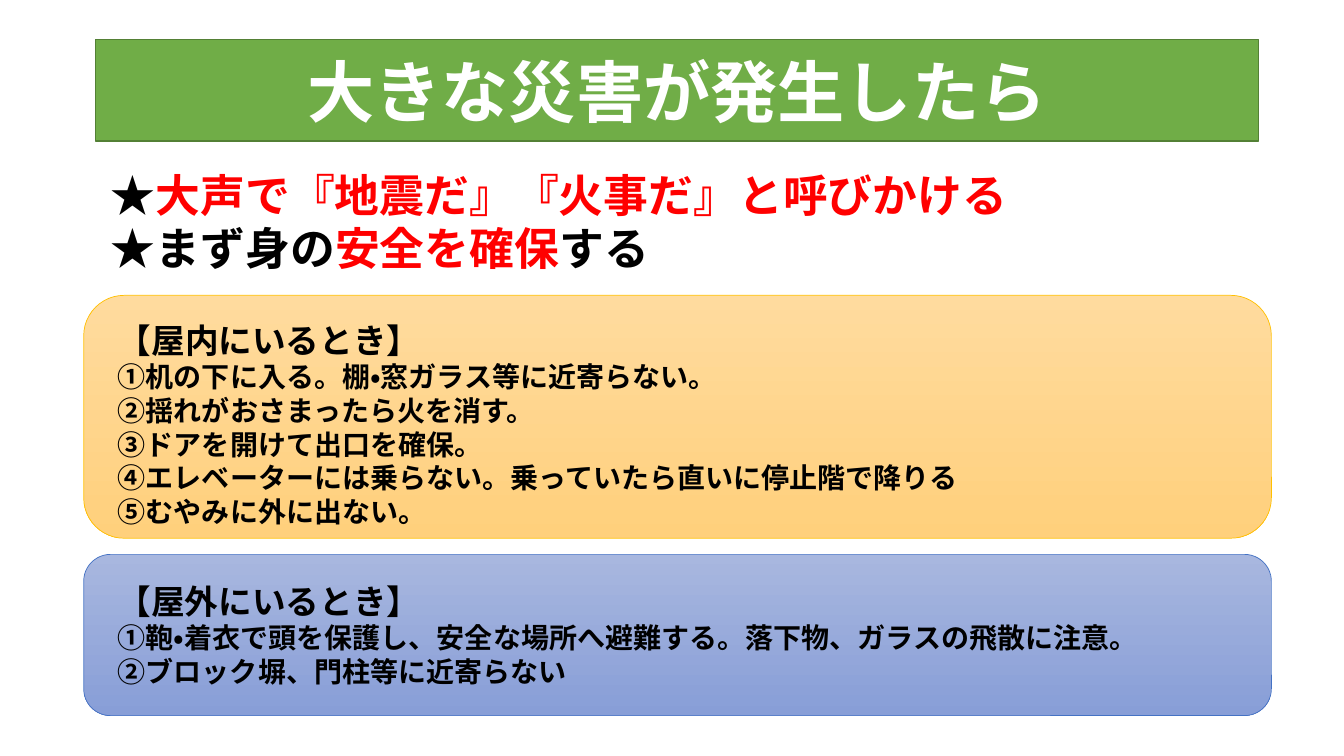
import pptx
import pptx.dml.color
import pptx.enum.lang
import pptx.enum.shapes
import pptx.enum.text
import pptx.util

Inches = pptx.util.Inches
RGBColor = pptx.dml.color.RGBColor

FONT = "Calibri"
WHITE = RGBColor(0xFF, 0xFF, 0xFF)
BLACK = RGBColor(0x00, 0x00, 0x00)
RED = RGBColor(0xFF, 0x00, 0x00)
GREEN = RGBColor(0x70, 0xAD, 0x47)
DARK_GREEN = RGBColor(0x53, 0x80, 0x35)
INDOOR_TOP = RGBColor(0xFF, 0xDB, 0x9E)
INDOOR_BOTTOM = RGBColor(0xFF, 0xD0, 0x7C)
INDOOR_EDGE = RGBColor(0xFF, 0xC0, 0x00)
OUTDOOR_TOP = RGBColor(0xA8, 0xB7, 0xDF)
OUTDOOR_BOTTOM = RGBColor(0x88, 0x9E, 0xD7)
OUTDOOR_EDGE = RGBColor(0x44, 0x72, 0xC4)

CALLS = [
    [("★", BLACK), ("大声で『地震だ』『火事だ』と呼びかける", RED)],
    [("★まず身の", BLACK), ("安全を確保", RED), ("する", BLACK)],
]
INDOOR_RULES = [
    "①机の下に入る。棚・窓ガラス等に近寄らない。",
    "②揺れがおさまったら火を消す。",
    "③ドアを開けて出口を確保。",
    "④エレベーターには乗らない。乗っていたら直いに停止階で降りる",
    "⑤むやみに外に出ない。",
]
OUTDOOR_RULES = [
    "①鞄・着衣で頭を保護し、安全な場所へ避難する。落下物、ガラスの飛散に注意。",
    "②ブロック塀、門柱等に近寄らない",
]


def add_run(paragraph, text, size, color=BLACK):
    run = paragraph.add_run()
    run.text = text
    font = run.font
    font.name = FONT
    font.size = pptx.util.Pt(size)
    font.bold = True
    font.color.rgb = color
    font.language_id = pptx.enum.lang.MSO_LANGUAGE_ID.JAPANESE


def format_title(title, text):
    title.left, title.top = Inches(0.95), Inches(0.39)
    title.width, title.height = Inches(11.53), Inches(1.01)
    title.fill.solid()
    title.fill.fore_color.rgb = GREEN
    title.line.color.rgb = DARK_GREEN
    title.line.width = pptx.util.Pt(1)
    frame = title.text_frame
    frame.auto_size = pptx.enum.text.MSO_AUTO_SIZE.NONE
    frame.vertical_anchor = pptx.enum.text.MSO_ANCHOR.MIDDLE
    heading = frame.paragraphs[0]
    heading.alignment = pptx.enum.text.PP_ALIGN.CENTER
    add_run(heading, text, 48, WHITE)


def add_panel(slide, top, height, colors, edge):
    """Add a rounded panel shaded from the first colour down to the second."""
    panel = slide.shapes.add_shape(
        pptx.enum.shapes.MSO_SHAPE.ROUNDED_RECTANGLE,
        Inches(0.83), Inches(top), Inches(11.78), Inches(height))
    panel.shadow.inherit = False
    panel.fill.gradient()
    panel.fill.gradient_angle = 270
    for stop, color in zip(panel.fill.gradient_stops, colors):
        stop.color.rgb = color
    panel.line.color.rgb = edge
    panel.line.width = pptx.util.Pt(0.5)


def add_lines(slide, left, top, width, height, lines):
    """Add a text box; each line is a list of (text, size, colour) runs."""
    box = slide.shapes.add_textbox(
        Inches(left), Inches(top), Inches(width), Inches(height))
    frame = box.text_frame
    frame.word_wrap = True
    frame.auto_size = pptx.enum.text.MSO_AUTO_SIZE.SHAPE_TO_FIT_TEXT
    for index, runs in enumerate(lines):
        paragraph = frame.add_paragraph() if index else frame.paragraphs[0]
        for text, size, color in runs:
            add_run(paragraph, text, size, color)


def add_rules(slide, top, width, height, heading, rules):
    lines = [[(heading, 24, BLACK)]] + [[(rule, 20, BLACK)] for rule in rules]
    add_lines(slide, 1.07, top, width, height, lines)


def main():
    presentation = pptx.Presentation()
    presentation.slide_width = Inches(13.33)
    presentation.slide_height = Inches(7.5)
    slide = presentation.slides.add_slide(
        presentation.slide_layouts.get_by_name("Title Only"))

    format_title(slide.shapes.title, "大きな災害が発生したら")
    add_lines(slide, 1, 1.61, 10.04, 1.18,
              [[(text, 32, color) for text, color in call] for call in CALLS])

    add_panel(slide, 5.5, 1.6, (OUTDOOR_TOP, OUTDOOR_BOTTOM), OUTDOOR_EDGE)
    add_panel(slide, 2.93, 2.41, (INDOOR_TOP, INDOOR_BOTTOM), INDOOR_EDGE)
    add_rules(slide, 3.12, 8.58, 2.19, "【屋内にいるとき】", INDOOR_RULES)
    add_rules(slide, 5.71, 11.93, 1.18, "【屋外にいるとき】", OUTDOOR_RULES)

    presentation.save("out.pptx")


if __name__ == "__main__":
    main()
